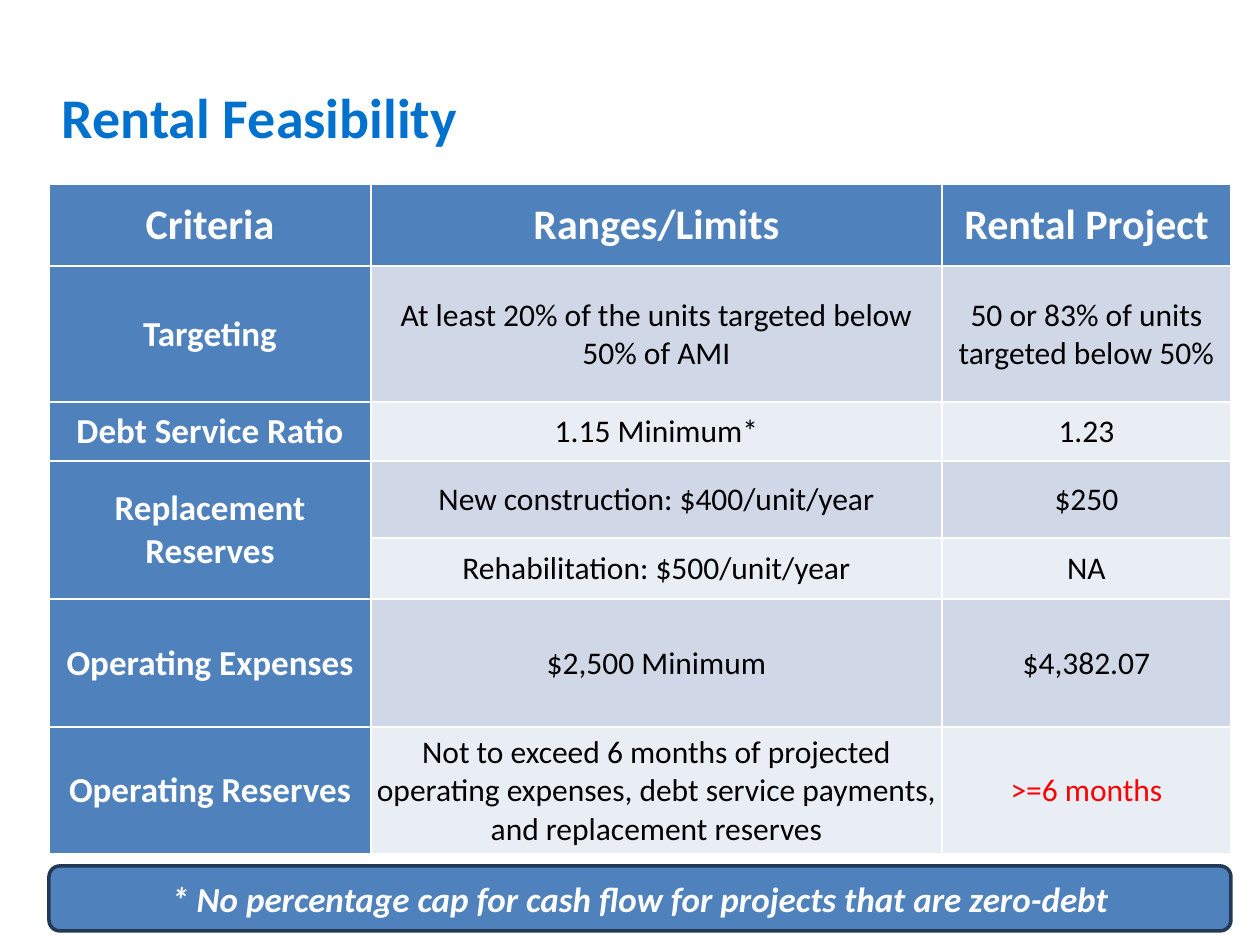
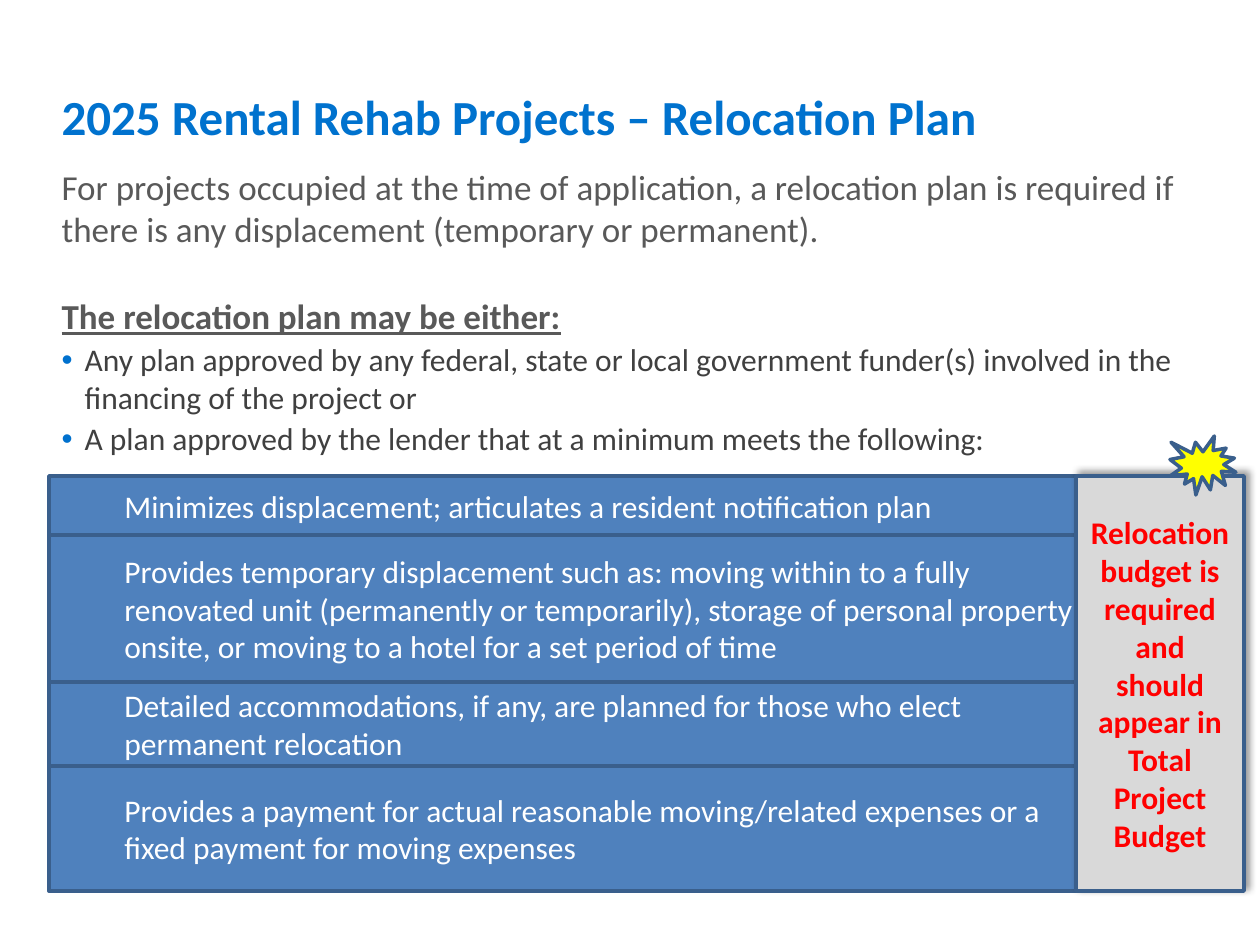
from dataclasses import dataclass

from lxml import etree
from pptx import Presentation
from pptx import util as u
from pptx.dml.color import RGBColor
from pptx.enum import shapes, text
from pptx.oxml import ns

PX = 914400 / 126


@dataclass(frozen=True)
class Theme:
    font: str = "Calibri"
    title: str = "0072CE"
    bullet: str = "0071CE"
    blue: str = "4F81BD"
    edge: str = "3A5F8C"
    note_edge: str = "233953"
    bands: tuple = ("D0D8E8", "E9EDF4")
    intro: str = "595959"
    item: str = "404040"
    side: str = "D9D9D9"
    star: str = "FFFF00"
    alert: str = "FF0000"
    white: str = "FFFFFF"
    black: str = "000000"
    title_size: int = 32
    long_title_size: int = 28
    header_size: int = 24
    lead_size: int = 20
    body_size: int = 18


T = Theme()


def add_run(p, words, size, color, bold=False, italic=False, underline=False):
    r = p.add_run()
    r.text = words
    f = r.font
    f.name, f.size = T.font, u.Pt(size)
    f.bold, f.italic, f.underline = bold, italic, underline
    f.color.rgb = RGBColor.from_string(color)


def add_box(s, kind, box, fill, edge):
    sp = s.shapes.add_shape(kind, *[round(v * PX) for v in box])
    sp.shadow.inherit = False
    sp.fill.solid()
    sp.fill.fore_color.rgb = RGBColor.from_string(fill)
    sp.line.color.rgb = RGBColor.from_string(edge)
    sp.line.width = u.Pt(2)
    sp.text_frame.word_wrap = True
    sp.text_frame.vertical_anchor = text.MSO_ANCHOR.MIDDLE
    sp.text_frame.paragraphs[0].alignment = text.PP_ALIGN.CENTER
    return sp


prs = Presentation()
prs.slide_width, prs.slide_height = round(1260 * PX), round(945 * PX)

slides = []
for layout, title, size in [
    (5, "Rental Feasibility", T.title_size),
    (1, "2025 Rental Rehab Projects – Relocation Plan", T.long_title_size),
]:
    s = prs.slides.add_slide(prs.slide_layouts[layout])
    sp = s.shapes.title
    sp.left, sp.top, sp.width, sp.height = [round(v * PX) for v in (49, 79, 1061, 74)]
    tf = sp.text_frame
    tf.auto_size = text.MSO_AUTO_SIZE.NONE
    tf.vertical_anchor = text.MSO_ANCHOR.MIDDLE
    tf.paragraphs[0].alignment = text.PP_ALIGN.LEFT
    add_run(tf.paragraphs[0], title, size, T.title, bold=True)
    slides.append(s)
feasibility, relocation = slides

rows = [
    (82, "Criteria", "Ranges/Limits", "Rental Project"),
    (136, "Targeting", "At least 20% of the units targeted below 50% of AMI",
     "50 or 83% of units targeted below 50%"),
    (59, "Debt Service Ratio", "1.15 Minimum*", "1.23"),
    (77, "Replacement Reserves", "New construction: $400/unit/year", "$250"),
    (61, "", "Rehabilitation: $500/unit/year", "NA"),
    (128, "Operating Expenses", "$2,500 Minimum", "$4,382.07"),
    (127, "Operating Reserves",
     "Not to exceed 6 months of projected operating expenses, "
     "debt service payments, and replacement reserves", ">=6 months"),
]
col_widths = (322, 571, 289)
left, width = 49, sum(col_widths)
table = feasibility.shapes.add_table(
    len(rows), len(col_widths), *[round(v * PX) for v in (left, 184, width, sum(r[0] for r in rows))]
).table
table.first_col = True
for col, w in zip(table.columns, col_widths):
    col.width = round(w * PX)
for i, (height, *words) in enumerate(rows):
    table.rows[i].height = round(height * PX)
    for j, word in enumerate(words):
        cell = table.cell(i, j)
        heading = i == 0 or j == 0
        cell.fill.solid()
        cell.fill.fore_color.rgb = RGBColor.from_string(T.blue if heading else T.bands[(i - 1) % 2])
        cell.vertical_anchor = text.MSO_ANCHOR.MIDDLE
        cell.margin_left = cell.margin_right = cell.margin_top = round(PX)
        cell.margin_bottom = 0
        p = cell.text_frame.paragraphs[0]
        p.alignment = text.PP_ALIGN.CENTER
        size = T.header_size if i == 0 else T.lead_size if j == 0 else T.body_size
        color = T.white if heading else T.alert if word.startswith(">=") else T.black
        if word:
            add_run(p, word, size, color, bold=heading)
table.cell(3, 0).merge(table.cell(4, 0))

note = add_box(feasibility, shapes.MSO_SHAPE.ROUNDED_RECTANGLE, (left, 866, width, 65), T.blue, T.note_edge)
add_run(note.text_frame.paragraphs[0], "* No percentage cap for cash flow for projects that are zero-debt",
        T.lead_size, T.white, bold=True, italic=True)

body = relocation.placeholders[1]
body.left, body.top, body.width, body.height = [round(v * PX) for v in (left, 159, 1160, 752)]
tf = body.text_frame
tf.auto_size = text.MSO_AUTO_SIZE.NONE
for i, (words, bulleted, strong, after) in enumerate([
    ("For projects occupied at the time of application, a relocation plan is required if "
     "there is any displacement (temporary or permanent).", False, False, 26),
    ("The relocation plan may be either:", False, True, 2),
    ("Any plan approved by any federal, state or local government funder(s) involved in the "
     "financing of the project or", True, False, 2),
    ("A plan approved by the lender that at a minimum meets the following:", True, False, 2),
]):
    p = tf.paragraphs[0] if i == 0 else tf.add_paragraph()
    pPr = p._p.get_or_add_pPr()
    indent = round(23 * PX) if bulleted else 0
    pPr.set("marL", str(indent))
    pPr.set("indent", str(-indent))
    if bulleted:
        clr = etree.SubElement(pPr, ns.qn("a:buClr"))
        etree.SubElement(clr, ns.qn("a:srgbClr"), val=T.bullet)
        etree.SubElement(pPr, ns.qn("a:buChar"), char="•")
    else:
        etree.SubElement(pPr, ns.qn("a:buNone"))
    p.space_before, p.space_after = u.Pt(0), u.Pt(after)
    add_run(p, words, T.body_size if bulleted else T.lead_size,
            T.item if bulleted else T.intro, bold=strong, underline=strong)

plan_top = top = 476
for height, words in [
    (59, "Minimizes displacement; articulates a resident notification plan"),
    (147, "Provides temporary displacement such as: moving within to a fully renovated unit "
          "(permanently or temporarily), storage of personal property onsite, or moving to a "
          "hotel for a set period of time"),
    (84, "Detailed accommodations, if any, are planned for those who elect permanent relocation"),
    (125, "Provides a payment for actual reasonable moving/related expenses or a fixed payment "
          "for moving expenses"),
]:
    sp = add_box(relocation, shapes.MSO_SHAPE.RECTANGLE, (left, top, 1043, height), T.blue, T.edge)
    p = sp.text_frame.paragraphs[0]
    p.alignment = text.PP_ALIGN.LEFT
    p._p.get_or_add_pPr().set("marL", str(round(63 * PX)))
    add_run(p, words, T.body_size, T.white)
    top += height

budget = add_box(relocation, shapes.MSO_SHAPE.FLOWCHART_PROCESS,
                 (1076, plan_top, 168, top - plan_top), T.side, T.edge)
add_run(budget.text_frame.paragraphs[0],
        "Relocation budget is required and should appear in Total Project Budget",
        T.body_size, T.alert, bold=True)
effects = budget._element.spPr.find(ns.qn("a:effectLst"))
shadow = etree.SubElement(effects, ns.qn("a:outerShdw"), blurRad=str(u.Pt(4)), dist=str(u.Pt(3)),
                          dir="18900000", algn="bl", rotWithShape="0")
clr = etree.SubElement(shadow, ns.qn("a:srgbClr"), val=T.black)
etree.SubElement(clr, ns.qn("a:alpha"), val="40000")

add_box(relocation, shapes.MSO_SHAPE.EXPLOSION1, (1170, 436, 66, 59), T.star, T.edge)

prs.save("out.pptx")
